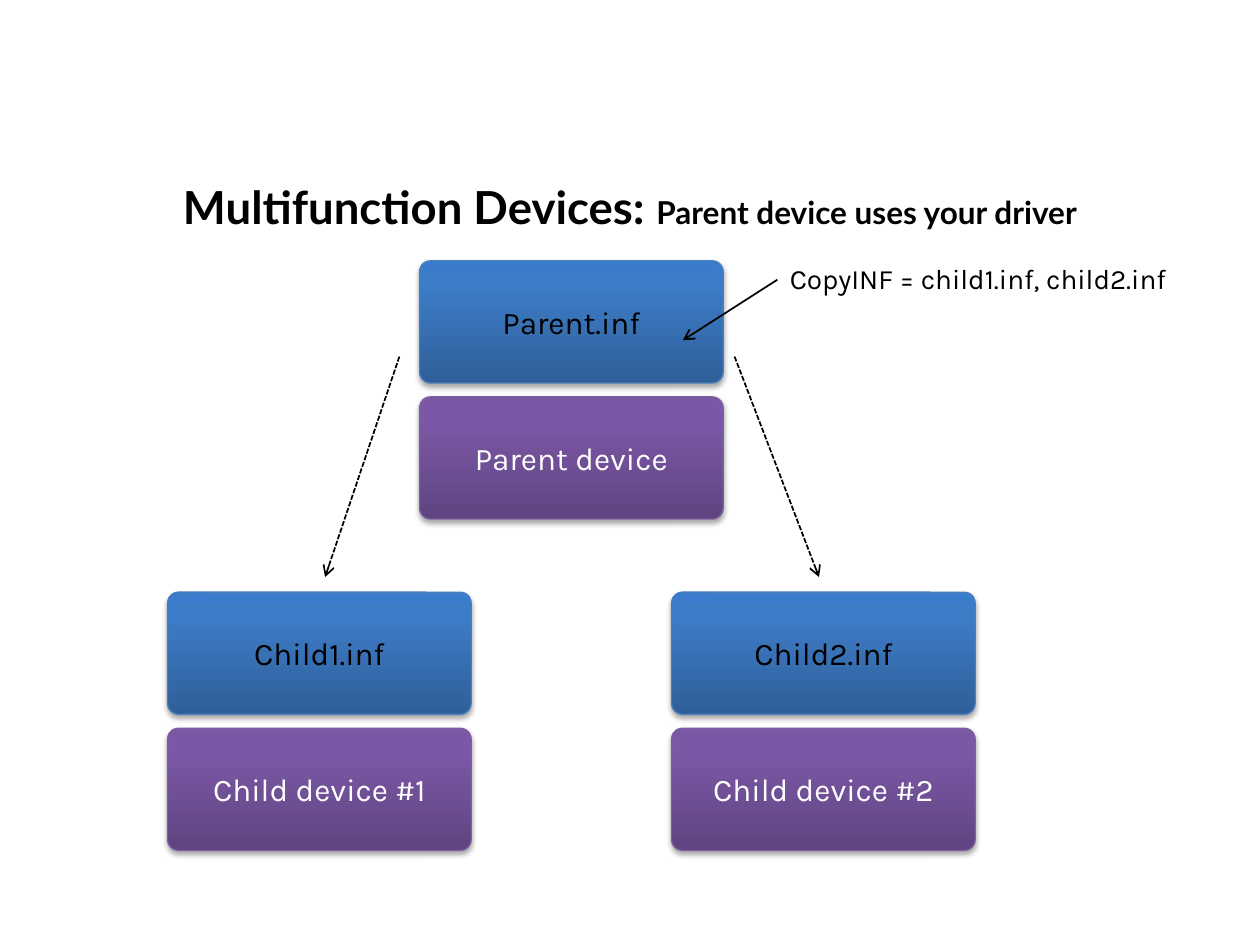
from lxml.etree import SubElement
from pptx import Presentation
from pptx.dml.color import RGBColor
from pptx.enum.dml import MSO_LINE
from pptx.enum.shapes import MSO_CONNECTOR, MSO_SHAPE
from pptx.enum.text import MSO_ANCHOR, MSO_AUTO_SIZE, PP_ALIGN
from pptx.oxml.ns import qn
from pptx.util import Inches, Pt

THEME = {
    "heading_font": "Lato",
    "body_font": "Karla",
    "ink": "000000",
    "title_size": 26,
    "subtitle_size": 18,
    "card_size": 18,
    "note_size": 16,
    "device": {
        "stops": [(0, "5F4480"), (80, "7B58A6"), (100, "7C57A8")],
        "outline": "7D60A0",
        "text": "FFFFFF",
    },
    "inf": {
        "stops": [(0, "2F5F99"), (80, "3D7CC7"), (100, "3A7CCB")],
        "outline": "4B7EBC",
        "text": "000000",
    },
}

TITLE = [
    ("Multifunction Devices: ", THEME["title_size"]),
    ("Parent device uses your driver", THEME["subtitle_size"]),
]
NOTE = "CopyINF = child1.inf, child2.inf"
STACKS = [
    ("Parent.inf", "Parent device", 3.33, 2.07),
    ("Child1.inf", "Child device #1", 1.33, 4.7),
    ("Child2.inf", "Child device #2", 5.33, 4.7),
]
ARROWS = [
    ((6.17, 2.22), (5.42, 2.7), False),
    ((5.83, 2.83), (6.5, 4.58), True),
    ((3.17, 2.83), (2.58, 4.58), True),
]
CARD_WIDTH, CARD_HEIGHT, CARD_PITCH = 2.41, 0.97, 1.08


def style_font(font, name, size, color, bold=False):
    """Set the face, size, colour and weight of a font."""
    font.name, font.size, font.bold = name, Pt(size), bold
    font.color.rgb = RGBColor.from_string(color)


def add_element(parent, tag, **attributes):
    """Append a DrawingML element with the given attributes."""
    return SubElement(parent, qn(tag), {key: str(value) for key, value in attributes.items()})


def fill_gradient(card, stops):
    """Fill a card with colour stops that run from bottom to top."""
    card.fill.gradient()
    card.fill.gradient_angle = 90
    stop_list = card.fill._fill._gradFill.find(qn("a:gsLst"))
    for old_stop in list(stop_list):
        stop_list.remove(old_stop)
    for percent, color in stops:
        stop = add_element(stop_list, "a:gs", pos=percent * 1000)
        add_element(stop, "a:srgbClr", val=color)


def add_shadow(card):
    """Give a card a soft shadow straight below it."""
    card.shadow.inherit = False
    effects = card._element.spPr.find(qn("a:effectLst"))
    shadow = add_element(effects, "a:outerShdw", blurRad=Pt(3.1), dist=Pt(1.8),
                         dir=5400000, rotWithShape=0)
    color = add_element(shadow, "a:srgbClr", val="000000")
    add_element(color, "a:alpha", val=35000)


def add_card(slide, label, left, top, look):
    """Add a rounded card with a centred label."""
    card = slide.shapes.add_shape(MSO_SHAPE.ROUNDED_RECTANGLE, Inches(left), Inches(top),
                                  Inches(CARD_WIDTH), Inches(CARD_HEIGHT))
    card.adjustments[0] = 0.09
    fill_gradient(card, look["stops"])
    card.line.color.rgb = RGBColor.from_string(look["outline"])
    card.line.width = Pt(0.75)
    add_shadow(card)
    card.text_frame.vertical_anchor = MSO_ANCHOR.MIDDLE
    caption = card.text_frame.paragraphs[0]
    caption.text = label
    caption.alignment = PP_ALIGN.CENTER
    style_font(caption.font, THEME["body_font"], THEME["card_size"], look["text"])


def add_arrow(slide, start, end, dashed):
    """Add a thin arrow, dashed where asked."""
    arrow = slide.shapes.add_connector(MSO_CONNECTOR.STRAIGHT,
                                       *(Inches(value) for value in start + end))
    arrow.line.color.rgb = RGBColor.from_string(THEME["ink"])
    arrow.line.width = Pt(1)
    if dashed:
        arrow.line.dash_style = MSO_LINE.SQUARE_DOT
    add_element(arrow.line._get_or_add_ln(), "a:tailEnd", type="arrow")
    add_element(arrow._element.spPr, "a:effectLst")


def add_title(slide):
    """Add the two-size heading."""
    title = slide.shapes.add_textbox(Inches(0.5), Inches(1.25), Inches(9), Inches(0.78))
    title.text_frame.word_wrap = True
    title.text_frame.vertical_anchor = MSO_ANCHOR.MIDDLE
    heading = title.text_frame.paragraphs[0]
    heading.alignment = PP_ALIGN.CENTER
    for words, size in TITLE:
        part = heading.add_run()
        part.text = words
        style_font(part.font, THEME["heading_font"], size, THEME["ink"], bold=True)


def add_note(slide):
    """Add the directive beside the parent card."""
    note = slide.shapes.add_textbox(Inches(6.17), Inches(2.03), Inches(3.33), Inches(0.37))
    note.text_frame.word_wrap = True
    note.text_frame.auto_size = MSO_AUTO_SIZE.SHAPE_TO_FIT_TEXT
    directive = note.text_frame.paragraphs[0]
    directive.text = NOTE
    style_font(directive.font, THEME["body_font"], THEME["note_size"], THEME["ink"])


def main():
    """Build the slide and save it."""
    deck = Presentation()
    deck.slide_width, deck.slide_height = Inches(10), Inches(7.5)
    slide = deck.slides.add_slide(deck.slide_layouts[6])
    add_title(slide)
    for inf, device, left, top in STACKS:
        add_card(slide, device, left, top + CARD_PITCH, THEME["device"])
        add_card(slide, inf, left, top, THEME["inf"])
    add_note(slide)
    for start, end, dashed in ARROWS:
        add_arrow(slide, start, end, dashed)
    deck.save("out.pptx")


if __name__ == "__main__":
    main()
